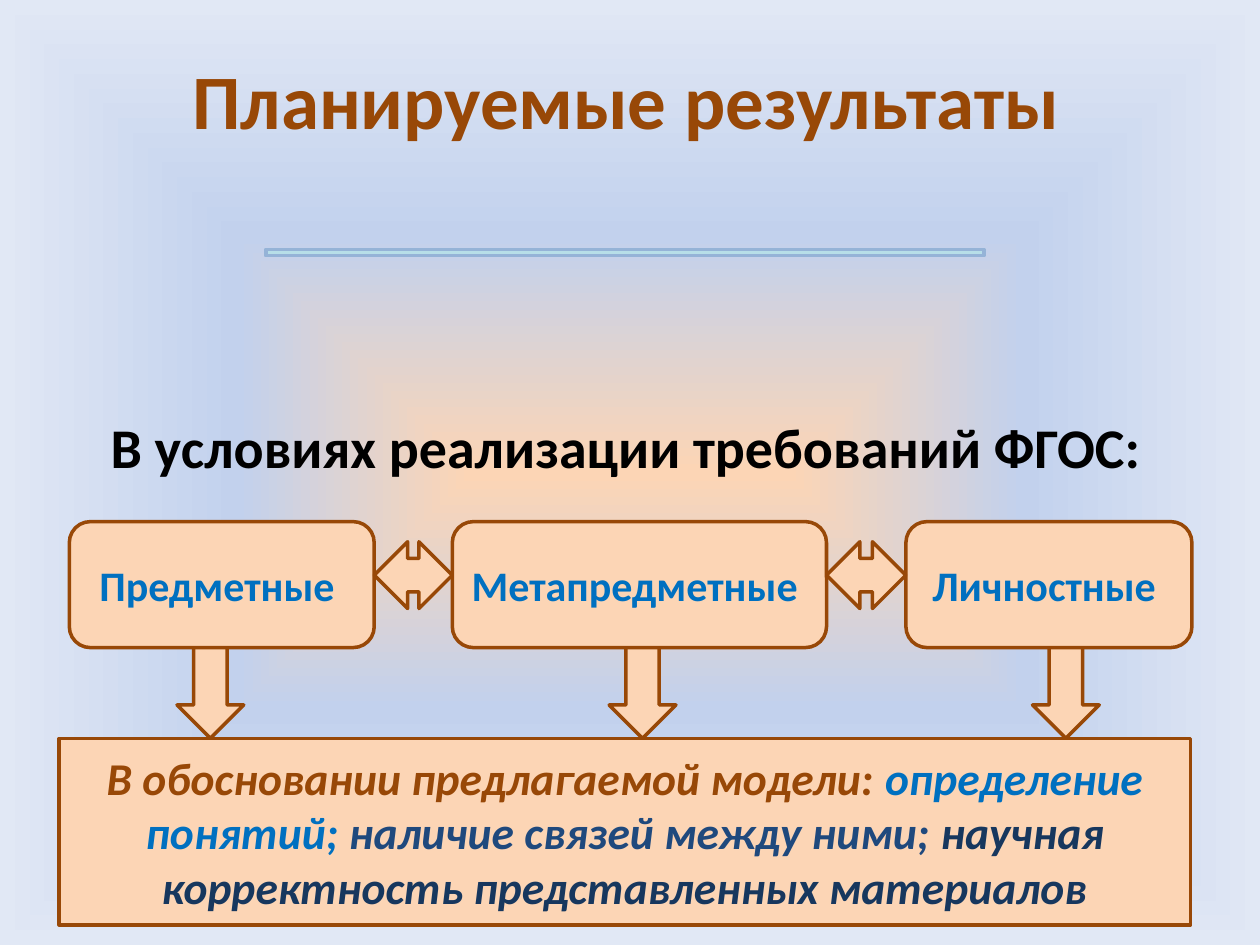
from lxml import etree
from pptx import Presentation
from pptx.dml.color import RGBColor
from pptx.enum.shapes import MSO_SHAPE
from pptx.enum.text import MSO_ANCHOR, PP_ALIGN
from pptx.oxml.ns import qn
from pptx.util import Inches, Pt

RECT, ROUNDED = MSO_SHAPE.RECTANGLE, MSO_SHAPE.ROUNDED_RECTANGLE
DOWN, BOTH_WAYS = MSO_SHAPE.DOWN_ARROW, MSO_SHAPE.LEFT_RIGHT_ARROW
MIDDLE, CENTER = MSO_ANCHOR.MIDDLE, PP_ALIGN.CENTER

PEACH = RGBColor(0xFC, 0xD5, 0xB5)
BROWN = RGBColor(0x98, 0x48, 0x07)
BLACK = RGBColor(0, 0, 0)
BLUE = RGBColor(0x00, 0x70, 0xC0)
DARK_BLUE = RGBColor(0x1F, 0x49, 0x7D)
NAVY = RGBColor(0x17, 0x37, 0x5E)
AQUA = RGBColor(0xB7, 0xDE, 0xE8)
STEEL = RGBColor(0x95, 0xB3, 0xD7)
BACKDROP = [(0, PEACH), (50, RGBColor(0xC2, 0xD1, 0xED)),
            (100, RGBColor(0xE1, 0xE8, 0xF5))]

# Content: headings as (text, size, colour, top, height)
HEADINGS = [
    ("Планируемые результаты", 44, BROWN, 0.16, 1.25),
    ("В условиях реализации требований ФГОС:", 32, BLACK, 3.2, 0.68),
]
# Result kinds as (text, left, width, centre of the arrow below)
RESULTS = [
    ("Предметные ", 0.55, 2.42, 1.67),
    ("Метапредметные ", 3.59, 2.97, 5.1),
    ("Личностные ", 7.19, 2.27, 8.46),
]
CONCLUSION = [
    ("В обосновании предлагаемой модели: ", BROWN),
    ("определение понятий; ", BLUE),
    ("наличие связей между ними; ", DARK_BLUE),
    ("научная корректность представленных материалов", NAVY),
]
MARGIN, TEXT_WIDTH = 0.47, 9
ROW_TOP, ROW_HEIGHT = 4.14, 1
ARROW_TOP, ARROW_WIDTH = 4.69, 0.53
CONCLUSION_TOP = 5.86


def write(box, parts, size, italic=False):
    frame = box.text_frame
    frame.word_wrap = True
    frame.vertical_anchor = MIDDLE
    para = frame.paragraphs[0]
    para.alignment = CENTER
    style = {"name": "Calibri", "size": Pt(size), "bold": True, "italic": italic}
    for text, colour in parts:
        span = para.add_run()
        span.text = text
        for key, value in style.items():
            setattr(span.font, key, value)
        span.font.color.rgb = colour


def add_block(page, kind, place, fill=PEACH, line=BROWN):
    block = page.shapes.add_shape(kind, *map(Inches, place))
    block.shadow.inherit = False
    block.fill.solid()
    block.fill.fore_color.rgb = fill
    block.line.color.rgb = line
    block.line.width = Pt(2)
    return block


def paint_background(page):
    page.background.fill.gradient()
    gradient = page.element.find(".//" + qn("a:gradFill"))
    for child in list(gradient):
        gradient.remove(child)
    stops = etree.SubElement(gradient, qn("a:gsLst"))
    for position, colour in BACKDROP:
        stop = etree.SubElement(stops, qn("a:gs"), pos=str(position * 1000))
        etree.SubElement(stop, qn("a:srgbClr"), val=str(colour))
    shade = etree.SubElement(gradient, qn("a:path"), path="shape")
    etree.SubElement(shade, qn("a:fillToRect"),
                     **{side: "50000" for side in "ltrb"})


def main():
    deck = Presentation()
    deck.slide_width, deck.slide_height = Inches(10), Inches(7.5)
    page = deck.slides.add_slide(deck.slide_layouts[6])
    paint_background(page)

    # Headings and the rule between them
    for text, size, colour, top, height in HEADINGS:
        box = page.shapes.add_textbox(
            *map(Inches, (MARGIN, top, TEXT_WIDTH, height)))
        write(box, [(text, colour)], size)
    add_block(page, RECT, (2.11, 1.98, 5.7, 0.05), AQUA, STEEL)

    # Down arrows start behind the result boxes
    for _, _, _, centre in RESULTS:
        add_block(page, DOWN, (centre - ARROW_WIDTH / 2, ARROW_TOP,
                               ARROW_WIDTH, CONCLUSION_TOP - ARROW_TOP))
    for text, left, width, _ in RESULTS:
        box = add_block(page, ROUNDED, (left, ROW_TOP, width, ROW_HEIGHT))
        write(box, [(text, BLUE)], 24)

    # Conclusion
    box = add_block(page, RECT, (MARGIN, CONCLUSION_TOP, 8.98, 1.48))
    write(box, CONCLUSION, 26, italic=True)

    # Two-way arrows fill the gaps between neighbouring boxes
    for (_, left, width, _), (_, following, _, _) in zip(RESULTS, RESULTS[1:]):
        end = left + width
        add_block(page, BOTH_WAYS, (end, 4.3, following - end, ARROW_WIDTH))

    deck.save("out.pptx")


if __name__ == "__main__":
    main()
